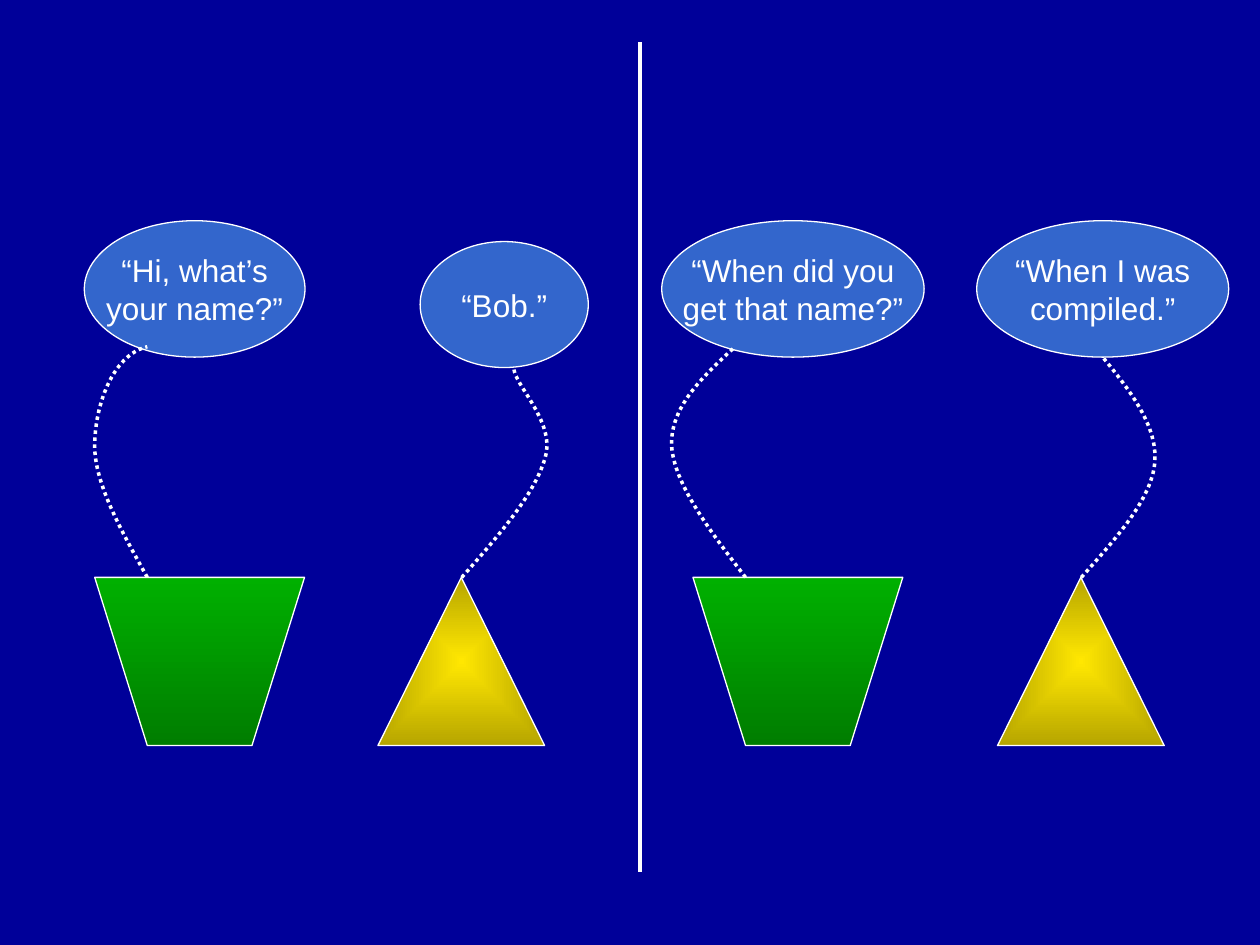
from dataclasses import dataclass

from pptx import Presentation
from pptx.dml.color import RGBColor
from pptx.enum.dml import MSO_LINE
from pptx.enum.shapes import MSO_CONNECTOR, MSO_SHAPE
from pptx.enum.text import MSO_ANCHOR, PP_ALIGN
from pptx.oxml import parse_xml
from pptx.oxml.ns import nsdecls, qn
from pptx.util import Cm, Pt


@dataclass(frozen=True)
class Theme:
    back: str = "000099"
    ink: str = "FFFFFF"
    bubble: str = "3366CC"
    green: str = "00B000"
    gold: str = "FFE701"
    shade: int = 46275
    font: str = "Arial"
    size: float = 18
    thin: float = 0.75
    dots: float = 2
    thick: float = 2.25


THEME = Theme()
LINEAR = '<a:lin ang="5400000" scaled="1"/>'
CENTRE = ('<a:path path="shape"><a:fillToRect l="50000" t="50000" '
          'r="50000" b="50000"/></a:path>')
FLOOR = 11.64
HEIGHT = 3.39

BUCKETS = [1.91, 13.97]
CONES = [7.62, 20.11]
BUBBLES = [
    (1.7, 4.45, 4.45, 2.75, "“Hi, what’s\nyour name?”"),
    (8.47, 4.87, 3.39, 2.54, "“Bob.”"),
    (13.34, 4.45, 5.29, 2.75, "“When did you\nget that name?”"),
    (19.69, 4.45, 5.08, 2.75, "“When I was\ncompiled.”"),
]
TAILS = [
    [(2.97, FLOOR), (2.44, 10.69), (1.91, 9.75), (1.91, 8.99),
     (1.91, 8.2), (2.26, 7.16), (2.97, 6.99)],
    [(15.03, FLOOR), (14.3, 10.69), (13.59, 9.75), (13.54, 8.99),
     (13.51, 8.2), (14.17, 7.59), (14.82, 6.99)],
    [(9.31, FLOOR), (10.08, 10.77), (10.82, 9.91), (11, 9.19),
     (11.18, 8.48), (10.36, 7.75), (10.36, 7.42)],
    [(21.8, FLOOR), (22.5, 10.85), (23.22, 10.06), (23.28, 9.32),
     (23.34, 8.59), (22.78, 7.87), (22.23, 7.2)],
]


def color(code):
    return RGBColor.from_string(code)


def stroke(shape, width):
    shape.line.color.rgb = color(THEME.ink)
    shape.line.width = Pt(width)


def finish(shape, width=THEME.thin):
    shape.shadow.inherit = False
    stroke(shape, width)


def blend(shape, code, mode):
    shape.fill.background()
    empty = shape.element.spPr.find(qn("a:noFill"))
    grad = parse_xml(
        f'<a:gradFill rotWithShape="1" {nsdecls("a")}><a:gsLst>'
        f'<a:gs pos="0"><a:srgbClr val="{code}"/></a:gs>'
        f'<a:gs pos="100000"><a:srgbClr val="{code}">'
        f'<a:shade val="{THEME.shade}"/></a:srgbClr></a:gs>'
        f'</a:gsLst>{mode}</a:gradFill>')
    empty.getparent().replace(empty, grad)


def write(shape, text, size=THEME.size, ink=THEME.ink, align=PP_ALIGN.CENTER):
    frame = shape.text_frame
    frame.word_wrap = False
    frame.vertical_anchor = MSO_ANCHOR.MIDDLE
    frame.text = text
    for para in frame.paragraphs:
        para.alignment = align
        para.font.name = THEME.font
        para.font.size = Pt(size)
        para.font.color.rgb = color(ink)


def trace(slide, points, close):
    start, *rest = [(Cm(x), Cm(y)) for x, y in points]
    pen = slide.shapes.build_freeform(*start)
    pen.add_line_segments(rest, close=close)
    return pen.convert_to_shape()


def bucket(slide, left):
    base = FLOOR + HEIGHT
    shape = trace(slide, [(left, FLOOR), (left + 1.06, base),
                          (left + 3.17, base), (left + 4.23, FLOOR)], True)
    blend(shape, THEME.green, LINEAR)
    finish(shape)


def cone(slide, left):
    shape = slide.shapes.add_shape(MSO_SHAPE.ISOSCELES_TRIANGLE, Cm(left),
                                   Cm(FLOOR), Cm(3.36), Cm(HEIGHT))
    blend(shape, THEME.gold, CENTRE)
    finish(shape)


def bubble(slide, left, top, width, height, text):
    shape = slide.shapes.add_shape(MSO_SHAPE.OVAL, Cm(left), Cm(top),
                                   Cm(width), Cm(height))
    shape.fill.solid()
    shape.fill.fore_color.rgb = color(THEME.bubble)
    finish(shape)
    write(shape, text)


def tail(slide, points):
    shape = trace(slide, points, False)
    steps = list(shape.element.spPr.iter(qn("a:lnTo")))
    for i in range(0, len(steps), 3):
        curve = parse_xml(f'<a:cubicBezTo {nsdecls("a")}/>')
        steps[i].addprevious(curve)
        for step in steps[i:i + 3]:
            curve.append(step[0])
            step.getparent().remove(step)
    shape.fill.background()
    finish(shape, THEME.dots)
    shape.line.dash_style = MSO_LINE.ROUND_DOT


def divide(slide, x, top, base):
    line = slide.shapes.add_connector(MSO_CONNECTOR.STRAIGHT, Cm(x), Cm(top),
                                      Cm(x), Cm(base))
    stroke(line, THEME.thick)
    line.element.spPr.append(parse_xml(f'<a:effectLst {nsdecls("a")}/>'))


def main():
    deck = Presentation()
    deck.slide_width, deck.slide_height = Cm(25.4), Cm(19.05)
    slide = deck.slides.add_slide(deck.slide_layouts[6])
    slide.background.fill.solid()
    slide.background.fill.fore_color.rgb = color(THEME.back)

    for left in BUCKETS:
        bucket(slide, left)
    divide(slide, 12.91, 0.85, 17.57)
    for left in CONES:
        cone(slide, left)
    for item in BUBBLES:
        bubble(slide, *item)
    for points in TAILS:
        tail(slide, points)
    deck.save("out.pptx")


if __name__ == "__main__":
    main()
